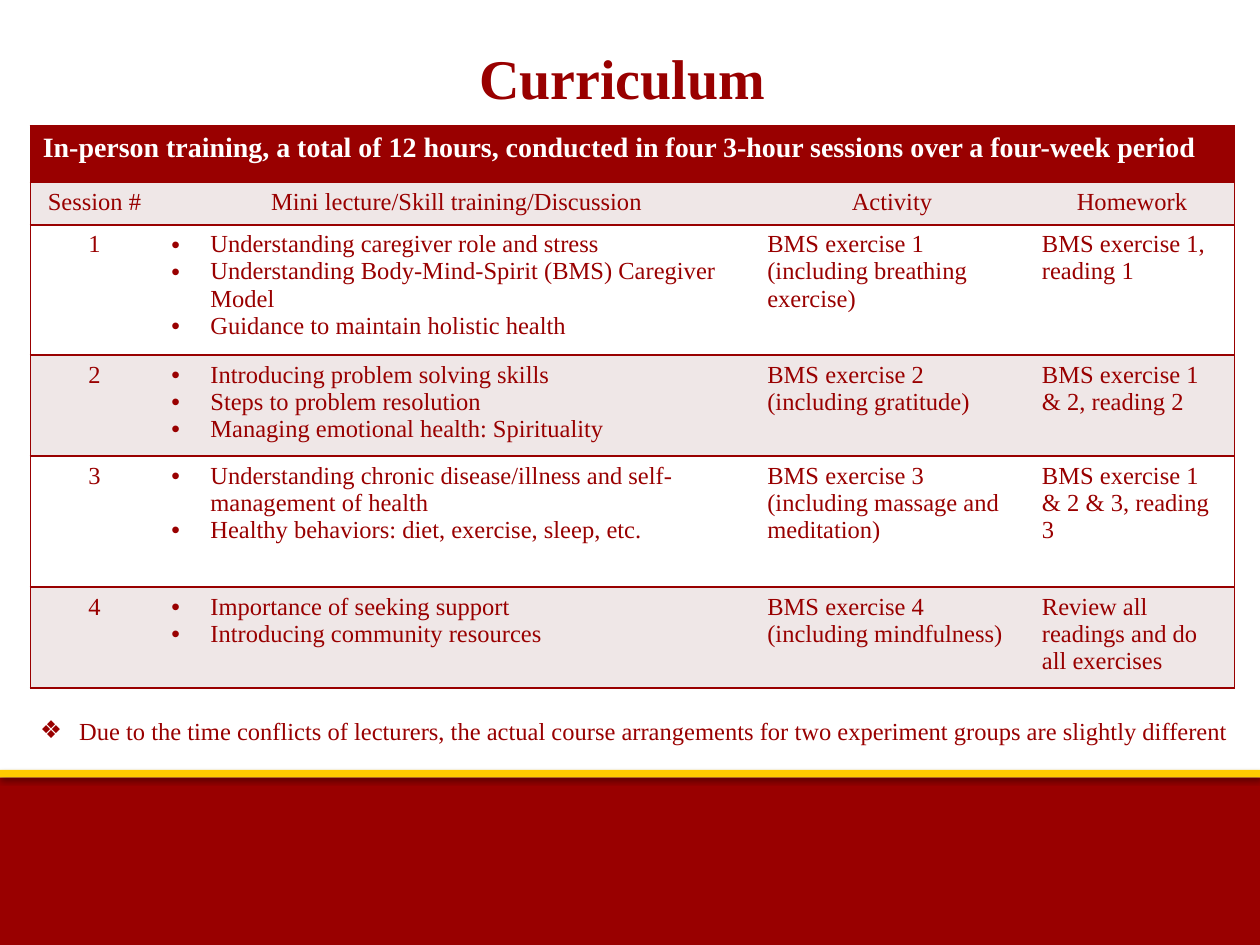
from lxml import etree
from pptx import Presentation
from pptx import util as u
from pptx.dml.color import RGBColor
from pptx.enum import shapes, text
from pptx.oxml import parse_xml
from pptx.oxml.ns import nsdecls, qn

TITLE = "Curriculum"
BANNER = ("In-person training, a total of 12 hours, conducted in four 3-hour "
          "sessions over a four-week period")
HEADINGS = ["Session #", "Mini lecture/Skill training/Discussion", "Activity", "Homework"]
SESSIONS = [  # topics, activity, homework
    (["Understanding caregiver role and stress",
      "Understanding Body-Mind-Spirit (BMS) Caregiver Model",
      "Guidance to maintain holistic health"],
     ["BMS exercise 1", "(including breathing exercise)"],
     ["BMS exercise 1, reading 1"]),
    (["Introducing problem solving skills",
      "Steps to problem resolution",
      "Managing emotional health: Spirituality"],
     ["BMS exercise 2 (including gratitude)"],
     ["BMS exercise 1 & 2, reading 2"]),
    (["Understanding chronic disease/illness and self-management of health",
      "Healthy behaviors: diet, exercise, sleep, etc."],
     ["BMS exercise 3 (including massage and meditation)"],
     ["BMS exercise 1 & 2 & 3, reading 3"]),
    (["Importance of seeking support",
      "Introducing community resources"],
     ["BMS exercise 4 (including mindfulness)"],
     ["Review all readings and do all exercises"]),
]
NOTE = ("Due to the time conflicts of lecturers, the actual course arrangements "
        "for two experiment groups are slightly different")

COLORS = {"red": "990000", "gold": "FFCC00", "white": "FFFFFF", "tint": "EFE7E7"}
FONT = "Times New Roman"
COLUMN_WIDTHS = [1.02, 4.73, 2.18, 1.63]
ROW_HEIGHTS = [0.45, 0.33, 1.03, 0.8, 1.04, 0.8]
INDENT = u.Inches(0.31)
LEFT, CENTER = text.PP_ALIGN.LEFT, text.PP_ALIGN.CENTER


def rgb(name):
    return RGBColor.from_string(COLORS[name])


def box(left, top, width, height):
    return [u.Inches(n) for n in (left, top, width, height)]


def write(frame, lines, size=14, color="red", bold=False, align=LEFT, bullet=None):
    frame.word_wrap = True
    for i, line in enumerate(lines):
        paragraph = frame.paragraphs[0] if i == 0 else frame.add_paragraph()
        paragraph.alignment = align
        if bullet:
            props = paragraph._p.get_or_add_pPr()
            props.set("marL", str(INDENT))
            props.set("indent", str(-INDENT))
            etree.SubElement(props, qn("a:buFont")).set("typeface", "Arial")
            etree.SubElement(props, qn("a:buChar")).set("char", bullet)
        run = paragraph.add_run()
        run.text = line
        run.font.name, run.font.size, run.font.bold = FONT, u.Pt(size), bold
        run.font.color.rgb = rgb(color)


def add_band(slide, top, height, color, opacity, distance):
    """Full-width bar with a soft shadow falling straight down."""
    band = slide.shapes.add_shape(shapes.MSO_SHAPE.RECTANGLE, *box(0, top, 10, height))
    band.fill.solid()
    band.fill.fore_color.rgb = rgb(color)
    band.line.fill.background()
    band.shadow.inherit = False
    effects = band._element.spPr.find(qn("a:effectLst"))
    effects.append(parse_xml(
        f'<a:outerShdw {nsdecls("a")} blurRad="{u.Pt(3.1)}" dist="{u.Pt(distance)}" '
        f'dir="5400000" rotWithShape="0"><a:srgbClr val="000000">'
        f'<a:alpha val="{opacity * 1000}"/></a:srgbClr></a:outerShdw>'))


def style_cell(cell, fill, first, last):
    """Rule above and below; side rules only at the edges of the table."""
    props = cell._tc.get_or_add_tcPr()
    for side, ruled in (("L", first), ("R", last), ("T", True), ("B", True)):
        paint = (f'<a:solidFill><a:srgbClr val="{COLORS["red"]}"/></a:solidFill>'
                 if ruled else "<a:noFill/>")
        props.append(parse_xml(
            f'<a:ln{side} {nsdecls("a")} w="{u.Pt(1)}">{paint}</a:ln{side}>'))
    cell.fill.solid()
    cell.fill.fore_color.rgb = rgb(fill)


def add_curriculum(slide):
    frame = slide.shapes.add_table(
        len(ROW_HEIGHTS), len(COLUMN_WIDTHS),
        *box(0.24, 1, sum(COLUMN_WIDTHS), sum(ROW_HEIGHTS)))
    table = frame.table
    table.first_row = table.horz_banding = False
    for column, width in zip(table.columns, COLUMN_WIDTHS):
        column.width = u.Inches(width)
    last = len(COLUMN_WIDTHS) - 1
    for r, height in enumerate(ROW_HEIGHTS):
        table.rows[r].height = u.Inches(height)
        fill = "red" if r == 0 else "tint" if r % 2 else "white"
        for c in range(last + 1):
            style_cell(table.cell(r, c), fill, c == 0, c == last)

    table.cell(0, 0).merge(table.cell(0, last))
    write(table.cell(0, 0).text_frame, [BANNER], size=16, color="white", bold=True)
    for c, heading in enumerate(HEADINGS):
        write(table.cell(1, c).text_frame, [heading], align=CENTER)
    for number, (topics, activity, homework) in enumerate(SESSIONS, 1):
        session, lecture, practice, home = [
            cell.text_frame for cell in table.rows[number + 1].cells]
        write(session, [str(number)], align=CENTER)
        write(lecture, topics, bullet="•")
        write(practice, activity)
        write(home, homework)


def main():
    deck = Presentation()
    deck.slide_width, deck.slide_height = u.Inches(10), u.Inches(7.5)
    slide = deck.slides.add_slide(deck.slide_layouts[5])

    add_band(slide, 6.17, 1.33, "red", opacity=35, distance=1.8)
    add_band(slide, 6.11, 0.06, "gold", opacity=38, distance=1.6)

    title = slide.shapes.title
    title.left, title.top, title.width, title.height = box(1.57, 0.29, 6.74, 0.64)
    title.text_frame.vertical_anchor = text.MSO_ANCHOR.MIDDLE
    write(title.text_frame, [TITLE], size=32, bold=True, align=CENTER)

    note = slide.shapes.add_textbox(*box(0.22, 5.63, 9.93, 0.34))
    write(note.text_frame, [NOTE], bullet="❖")
    add_curriculum(slide)
    deck.save("out.pptx")


if __name__ == "__main__":
    main()
